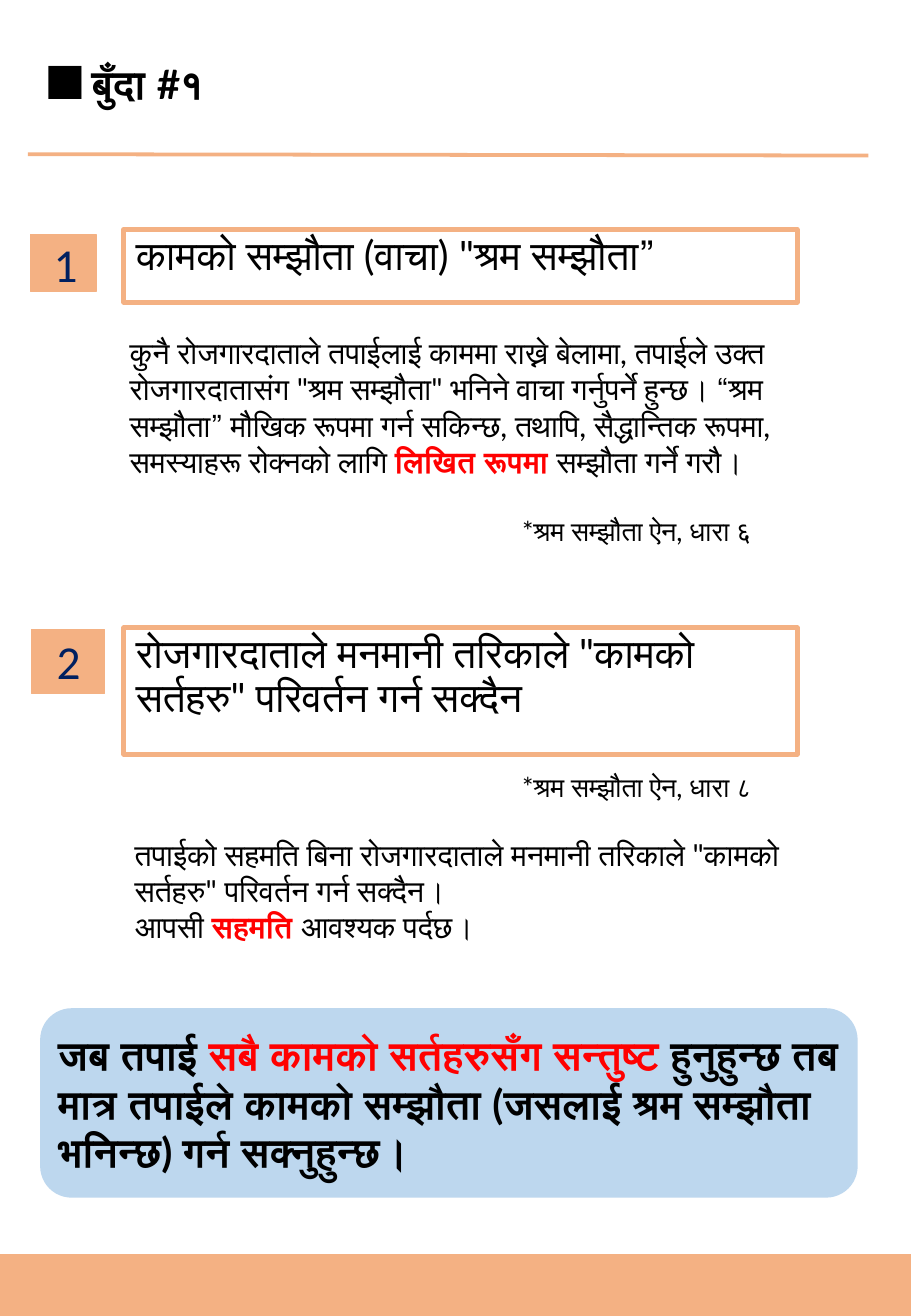
from dataclasses import dataclass

from lxml.etree import SubElement
from pptx import Presentation
from pptx.dml.color import RGBColor
from pptx.enum.shapes import MSO_CONNECTOR, MSO_SHAPE
from pptx.enum.text import MSO_ANCHOR, MSO_AUTO_SIZE, PP_ALIGN
from pptx.oxml.ns import qn
from pptx.util import Pt


@dataclass(frozen=True)
class Theme:
    accent: RGBColor = RGBColor(0xF4, 0xB1, 0x83)
    paper: RGBColor = RGBColor(0xFF, 0xFF, 0xFF)
    callout: RGBColor = RGBColor(0xBD, 0xD7, 0xEE)
    ink: RGBColor = RGBColor(0, 0, 0)
    number: RGBColor = RGBColor(0x00, 0x20, 0x60)
    emphasis: RGBColor = RGBColor(0xFF, 0, 0)
    font: str = "Lato"
    number_font: str = "Calibri"
    bullet_font: str = "Noto Sans CJK JP"
    large: int = 28
    heading: int = 24
    body: int = 18
    note: int = 16


@dataclass(frozen=True)
class Span:
    text: str
    bold: bool | None = None
    color: RGBColor | None = None
    size: int | None = None
    font: str | None = None


THEME = Theme()


def strong(text):
    return Span(text, bold=True, color=THEME.emphasis)


def style_font(font, name=None, size=None, color=None, bold=None):
    """Set only the properties that are given."""
    if name:
        font.name = name
    if size:
        font.size = Pt(size)
    if color is not None:
        font.color.rgb = color
    if bold is not None:
        font.bold = bold


def write(frame, paragraphs, size, bold=False, color=THEME.ink, font=THEME.font):
    """Fill a frame with paragraphs, each a list of plain strings and Spans."""
    frame.word_wrap = True
    for index, spans in enumerate(paragraphs):
        para = frame.add_paragraph() if index else frame.paragraphs[0]
        para.alignment = PP_ALIGN.LEFT
        style_font(para.font, font, size, color, bold)
        for item in spans:
            span = Span(item) if isinstance(item, str) else item
            run = para.add_run()
            run.text = span.text
            style_font(run.font, span.font, span.size, span.color, span.bold)


def add_text(page, place, paragraphs, size, **style):
    box = page.shapes.add_textbox(*map(Pt, place))
    write(box.text_frame, paragraphs, size, **style)
    box.text_frame.auto_size = MSO_AUTO_SIZE.SHAPE_TO_FIT_TEXT
    return box


def add_panel(page, place, fill, line_width=0, kind=MSO_SHAPE.RECTANGLE):
    panel = page.shapes.add_shape(kind, *map(Pt, place))
    panel.shadow.inherit = False
    panel.fill.solid()
    panel.fill.fore_color.rgb = fill
    if line_width:
        panel.line.color.rgb = THEME.accent
        panel.line.width = Pt(line_width)
    else:
        panel.line.fill.background()
    return panel


def add_rule(page, *ends):
    rule = page.shapes.add_connector(MSO_CONNECTOR.STRAIGHT, *map(Pt, ends))
    rule.line.color.rgb = THEME.accent
    rule.line.width = Pt(2.25)
    SubElement(rule._element.spPr, qn("a:effectLst"))


def add_badge(page, square, label_place, number):
    add_panel(page, square, THEME.accent, 0.75)
    label = add_text(page, label_place, [[number]], THEME.large,
                     color=THEME.number, font=THEME.number_font)
    label.text_frame.margin_left = label.text_frame.margin_right = Pt(2)
    label.text_frame.paragraphs[0].alignment = PP_ALIGN.CENTER


def add_title(page, top, height, text):
    panel = add_panel(page, (73.5, top, 399, height), THEME.paper, 3)
    frame = panel.text_frame
    frame.vertical_anchor = MSO_ANCHOR.TOP
    write(frame, [[text]], THEME.heading)
    frame.paragraphs[0].line_spacing = 0.9
    frame.paragraphs[0].space_before = Pt(10)


def add_note(page, top, height, text):
    add_text(page, (302.4, top, 187.2, height), [[text]], THEME.note)


def add_callout(page, place, spans):
    panel = add_panel(page, place, THEME.callout, kind=MSO_SHAPE.ROUNDED_RECTANGLE)
    frame = panel.text_frame
    frame.vertical_anchor = MSO_ANCHOR.MIDDLE
    frame.margin_left = frame.margin_right = Pt(5)
    frame.margin_top = frame.margin_bottom = Pt(2)
    write(frame, [spans], THEME.heading, bold=True)


def main():
    deck = Presentation()
    deck.slide_width, deck.slide_height = Pt(540), Pt(780)
    page = deck.slides.add_slide(deck.slide_layouts[6])

    add_rule(page, 16.6, 91.4, 514.8, 92.2)
    heading = [Span("■", size=THEME.large, font=THEME.bullet_font),
               Span(" ", bold=False, size=THEME.body), "बुँदा #१"]
    add_text(page, (20.2, 27.4, 328.3, 41), [heading], THEME.heading, bold=True)

    add_title(page, 136, 43.2, 'कामको सम्झौता (वाचा) "श्रम सम्झौता”')
    add_badge(page, (18, 139, 38.9, 33.8), (25.9, 136, 25.9, 41), "1")
    add_text(page, (69.8, 194.4, 402.5, 116.6), [[
        'कुनै रोजगारदाताले तपाईलाई काममा राख्ने बेलामा, तपाईले उक्त '
        'रोजगारदातासंग "श्रम सम्झौता" भनिने वाचा गर्नुपर्ने हुन्छ। “श्रम सम्झौता” '
        'मौखिक रूपमा गर्न सकिन्छ, तथापि, सैद्धान्तिक रूपमा, समस्याहरू रोक्नको लागि ',
        strong("लिखित रूपमा "), "सम्झौता गर्ने गरौ।"]], THEME.body)
    add_note(page, 301.7, 48.2, "*श्रम सम्झौता ऐन, धारा ६")

    add_title(page, 372.2, 74.9,
              'रोजगारदाताले मनमानी तरिकाले "कामको सर्तहरु" परिवर्तन गर्न सक्दैन')
    add_badge(page, (18.7, 373, 43.2, 38.2), (23.8, 371.5, 33.8, 41), "2")
    add_note(page, 452.9, 26.6, "*श्रम सम्झौता ऐन, धारा ८")
    add_text(page, (72.7, 491.8, 398.9, 114.5), [
        ['तपाईको सहमति बिना रोजगारदाताले मनमानी तरिकाले "कामको सर्तहरु" '
         'परिवर्तन गर्न सक्दैन।'],
        ["आपसी ", strong("सहमति "), "आवश्यक पर्दछ।"]], THEME.body)

    add_callout(page, (23.8, 597.6, 484.6, 112.3), [
        "जब तपाई ", strong("सबै कामको सर्तहरुसँग सन्तुष्ट "),
        "हुनुहुन्छ तब मात्र तपाईले कामको सम्झौता (जसलाई श्रम सम्झौता भनिन्छ) "
        "गर्न सक्नुहुन्छ।"])
    add_panel(page, (0, 744, 540, 36), THEME.accent, 1)
    deck.save("out.pptx")


if __name__ == "__main__":
    main()
